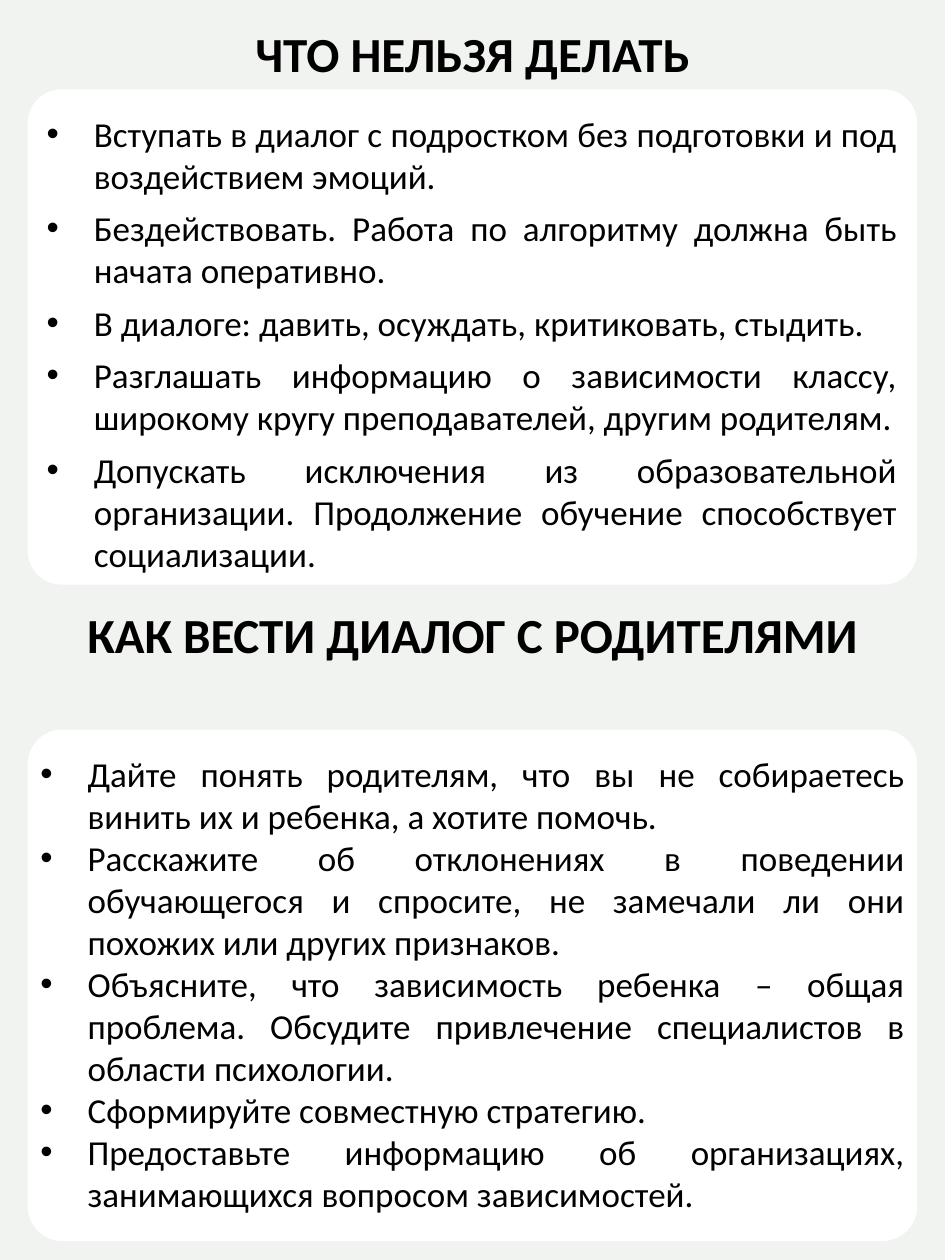
from pptx import Presentation
from pptx import util as u
from pptx.dml.color import RGBColor
from pptx.enum import shapes, text
from pptx.oxml.ns import qn
from lxml import etree

LEFT, WIDTH = 0.22, 7.06

MISTAKES = [
    "Вступать в диалог с подростком без подготовки и под воздействием эмоций.",
    "Бездействовать. Работа по алгоритму должна быть начата оперативно.",
    "В диалоге: давить, осуждать, критиковать, стыдить.",
    "Разглашать информацию о зависимости классу, широкому кругу "
    "преподавателей, другим родителям.",
    "Допускать исключения из образовательной организации. "
    "Продолжение обучение способствует социализации.",
]
ADVICE = [
    "Дайте понять родителям, что вы не собираетесь винить их и ребенка, "
    "а хотите помочь.",
    "Расскажите об отклонениях в поведении обучающегося и спросите, "
    "не замечали ли они похожих или других признаков.",
    "Объясните, что зависимость ребенка – общая проблема. "
    "Обсудите привлечение специалистов в области психологии.",
    "Сформируйте совместную стратегию.",
    "Предоставьте информацию об организациях, занимающихся вопросом "
    "зависимостей.",
]


def color(value):
    return RGBColor.from_string(value)


def write(paragraph, content, size=20, bold=False, align="JUSTIFY", before=0):
    paragraph.alignment = getattr(text.PP_ALIGN, align)
    paragraph.space_before = u.Pt(before)
    run = paragraph.add_run()
    run.text = content
    run.font.name = "Calibri"
    run.font.size = u.Pt(size)
    run.font.bold = bold
    run.font.color.rgb = color("000000")


def add_bullet(paragraph, indent=0.375):
    properties = paragraph._p.get_or_add_pPr()
    properties.set("marL", str(u.Inches(indent)))
    properties.set("indent", str(-u.Inches(indent)))
    etree.SubElement(properties, qn("a:buFont")).set("typeface", "Arial")
    etree.SubElement(properties, qn("a:buChar")).set("char", "•")


class Page:
    background = "F1F3F0"
    panel_fill = "FFFFFF"

    def __init__(self, slide):
        self.slide = slide
        fill = slide.background.fill
        fill.solid()
        fill.fore_color.rgb = color(self.background)

    def panel(self, top, height):
        """Add a rounded panel behind the text placeholders."""
        shape = self.slide.shapes.add_shape(
            shapes.MSO_SHAPE.ROUNDED_RECTANGLE,
            u.Inches(LEFT), u.Inches(top), u.Inches(WIDTH), u.Inches(height))
        shape.adjustments[0] = 0.068
        shape.shadow.inherit = False
        shape.fill.solid()
        shape.fill.fore_color.rgb = color(self.panel_fill)
        shape.line.fill.background()
        self.slide.shapes.title._element.addprevious(shape._element)

    def place(self, shape, left, top, width, height):
        """Position a text shape and return its top-anchored frame."""
        shape.left, shape.top = u.Inches(left), u.Inches(top)
        shape.width, shape.height = u.Inches(width), u.Inches(height)
        frame = shape.text_frame
        frame.word_wrap = True
        frame.auto_size = text.MSO_AUTO_SIZE.NONE
        frame.vertical_anchor = text.MSO_ANCHOR.TOP
        return frame

    def heading(self, shape, content, top, height):
        frame = self.place(shape, LEFT, top, WIDTH, height)
        write(frame.paragraphs[0], content, size=28, bold=True, align="CENTER")

    def bullets(self, shape, items, left, top, width, before=0):
        frame = self.place(shape, left, top, width, 3.8)
        for number, item in enumerate(items):
            paragraph = frame.add_paragraph() if number else frame.paragraphs[0]
            write(paragraph, item, before=before)
            add_bullet(paragraph)


def main():
    presentation = Presentation()
    presentation.slide_width = u.Inches(7.5)
    presentation.slide_height = u.Inches(10)
    two_content = presentation.slide_layouts[3]
    slide = presentation.slides.add_slide(two_content)
    page = Page(slide)

    page.panel(0.71, 3.93)
    page.panel(5.79, 4.06)

    page.heading(slide.shapes.title, "ЧТО НЕЛЬЗЯ ДЕЛАТЬ", 0.14, 0.57)
    page.bullets(slide.placeholders[1], MISTAKES, 0.27, 0.84, 6.95, before=6)

    second_heading = slide.shapes.add_textbox(0, 0, 0, 0)
    page.heading(second_heading, "КАК ВЕСТИ ДИАЛОГ С РОДИТЕЛЯМИ", 4.75, 1.04)
    page.bullets(slide.placeholders[2], ADVICE, LEFT, 5.92, WIDTH)

    for placeholder in list(slide.placeholders):
        if not placeholder.text_frame.text:
            placeholder._element.getparent().remove(placeholder._element)

    presentation.save("out.pptx")


if __name__ == "__main__":
    main()
